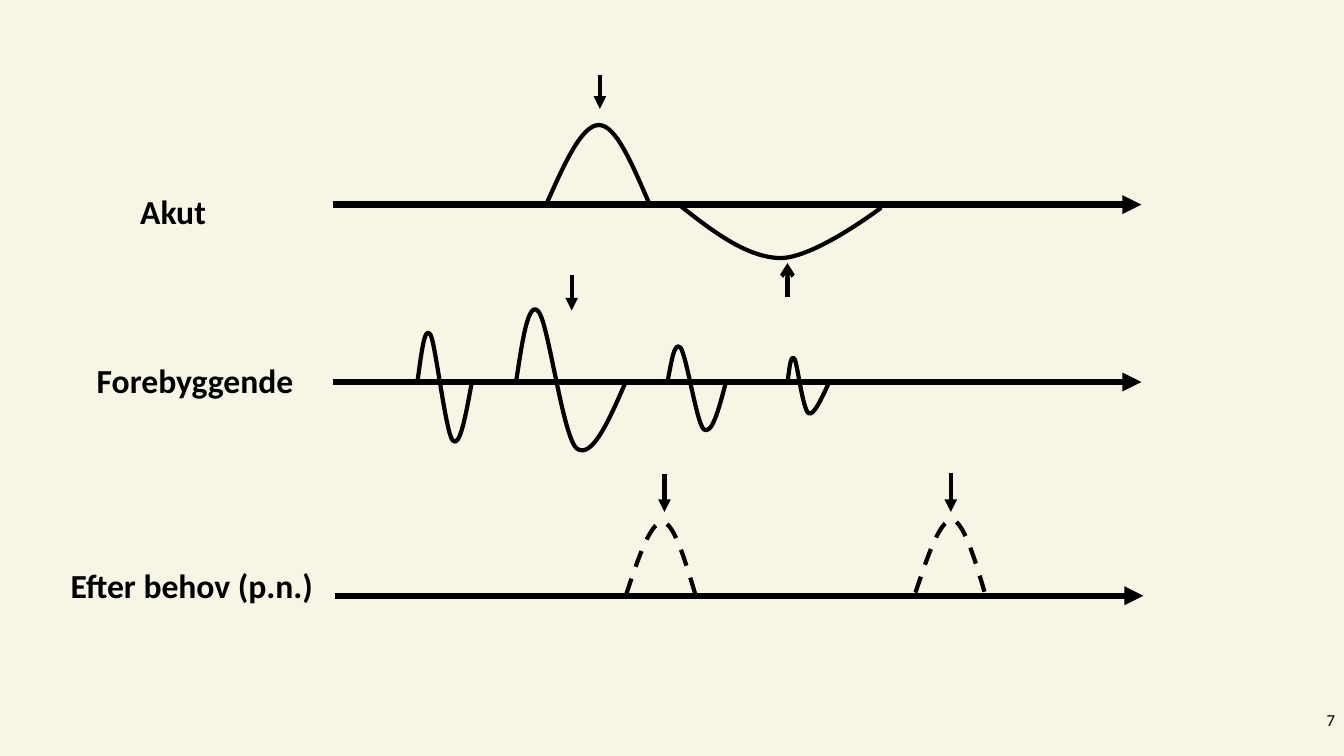
from lxml import etree
from pptx import Presentation, util as u
from pptx.dml.color import RGBColor
from pptx.enum import dml, shapes, text
from pptx.oxml.ns import qn

BLACK = "000000"


def rgb(hex_color):
    return RGBColor.from_string(hex_color)


class Diagram:
    font = "Calibri"
    ink = BLACK
    curve_width = 3
    axis_width = 4.5

    def __init__(self, slide, background):
        self.slide = slide
        slide.background.fill.solid()
        slide.background.fill.fore_color.rgb = rgb(background)

    def label(self, words, left, top, width, height, size=24, bold=True,
              align=text.PP_ALIGN.LEFT, anchor=text.MSO_ANCHOR.TOP, side_inset=0):
        box = self.slide.shapes.add_textbox(*map(u.Inches, (left, top, width, height)))
        frame = box.text_frame
        frame.word_wrap = True
        frame.vertical_anchor = anchor
        frame.margin_left = frame.margin_right = u.Inches(side_inset)
        frame.margin_top = frame.margin_bottom = 0
        paragraph = frame.paragraphs[0]
        paragraph.text = words
        paragraph.alignment = align
        paragraph.font.name = self.font
        paragraph.font.size = u.Pt(size)
        paragraph.font.bold = bold
        paragraph.font.color.rgb = rgb(self.ink)

    def arrow(self, x1, y1, x2, y2, width=curve_width, head="triangle"):
        line = self.slide.shapes.add_connector(
            shapes.MSO_CONNECTOR.STRAIGHT, *map(u.Inches, (x1, y1, x2, y2)))
        line.line.width = u.Pt(width)
        line.line.color.rgb = rgb(self.ink)
        etree.SubElement(line.line._get_or_add_ln(), qn("a:tailEnd"), type=head)
        etree.SubElement(line._element.spPr, qn("a:effectLst"))

    def time_axis(self, left, y, length=8.02):
        self.arrow(left, y, left + length, y, width=self.axis_width)

    def curve(self, knots, dashed=False):
        """Draw joined cubic curves: a start, then two controls and an end for each."""
        knots = [(u.Inches(x), u.Inches(y)) for x, y in knots]
        start, *ends = knots[::3]
        builder = self.slide.shapes.build_freeform(*start)
        builder.add_line_segments(ends, close=False)
        outline = builder.convert_to_shape()
        segments = list(outline._element.iter(qn("a:lnTo")))
        for i, segment in enumerate(segments):
            cubic = etree.Element(qn("a:cubicBezTo"))
            for x, y in knots[3 * i + 1:3 * i + 4]:
                etree.SubElement(cubic, qn("a:pt"),
                                 x=str(x - outline.left), y=str(y - outline.top))
            segment.getparent().replace(segment, cubic)
        outline.shadow.inherit = False
        outline.fill.background()
        outline.line.width = u.Pt(self.curve_width)
        outline.line.color.rgb = rgb(self.ink)
        if dashed:
            outline.line.dash_style = dml.MSO_LINE.DASH


def main():
    deck = Presentation()
    deck.slide_width, deck.slide_height = u.Inches(13.33), u.Inches(7.5)
    diagram = Diagram(deck.slides.add_slide(deck.slide_layouts[6]), "F7F6E6")

    diagram.label("7", 12.34, 7.02, 1, 0.24, size=12, bold=False, side_inset=0.1,
                  align=text.PP_ALIGN.RIGHT, anchor=text.MSO_ANCHOR.MIDDLE)

    for axis_left, axis_y in ((3.3, 2.03), (3.3, 3.79), (3.32, 5.91)):
        diagram.time_axis(axis_left, axis_y)

    for treatment, *place in (("Akut", 1.39, 1.89, 0.81, 0.27),
                              ("Forebyggende", 0.96, 3.57, 2.04, 0.27),
                              ("Efter behov (p.n.)", 0.7, 5.6, 2.95, 0.39)):
        diagram.label(treatment, *place)

    for x, top, tip in ((5.95, 0.74, 1.08), (9.43, 4.69, 5.08),
                        (6.59, 4.7, 5.08), (5.67, 2.73, 3.08)):
        diagram.arrow(x, top, x, tip)
    diagram.arrow(7.81, 2.95, 7.81, 2.61, head="arrow")

    acute_peak = [(5.43, 2), (5.6, 1.62), (5.77, 1.24), (5.94, 1.24),
                  (6.11, 1.24), (6.27, 1.63), (6.44, 2.02)]
    acute_dip = [(6.72, 2.02), (7.06, 2.29), (7.4, 2.55), (7.73, 2.56),
                 (8.07, 2.57), (8.74, 2.06), (8.74, 2.06)]
    preventive_waves = [
        [(4.14, 3.79), (4.18, 3.51), (4.21, 3.22), (4.27, 3.32), (4.32, 3.41),
         (4.42, 4.29), (4.49, 4.37), (4.56, 4.45), (4.62, 4.12), (4.68, 3.79)],
        [(5.12, 3.78), (5.18, 3.38), (5.24, 2.97), (5.34, 3.09), (5.44, 3.2),
         (5.58, 4.33), (5.72, 4.45), (5.87, 4.56), (6.04, 4.17), (6.21, 3.78)],
        [(6.62, 3.79), (6.66, 3.58), (6.69, 3.38), (6.75, 3.45), (6.81, 3.53),
         (6.91, 4.2), (6.98, 4.26), (7.06, 4.32), (7.13, 4.06), (7.2, 3.79)],
        [(7.81, 3.8), (7.83, 3.66), (7.84, 3.51), (7.88, 3.56), (7.91, 3.61),
         (7.96, 4.06), (8.02, 4.1), (8.07, 4.13), (8.15, 3.95), (8.23, 3.78)],
    ]
    for wave in [acute_peak, acute_dip, *preventive_waves]:
        diagram.curve(wave)

    as_needed_peak = [(0, 0.72), (0.12, 0.36), (0.24, 0), (0.36, 0),
                      (0.47, 0), (0.58, 0.36), (0.69, 0.73)]
    for left, top in ((6.21, 5.18), (9.08, 5.16)):
        diagram.curve([(left + x, top + y) for x, y in as_needed_peak], dashed=True)

    deck.save("out.pptx")


if __name__ == "__main__":
    main()
